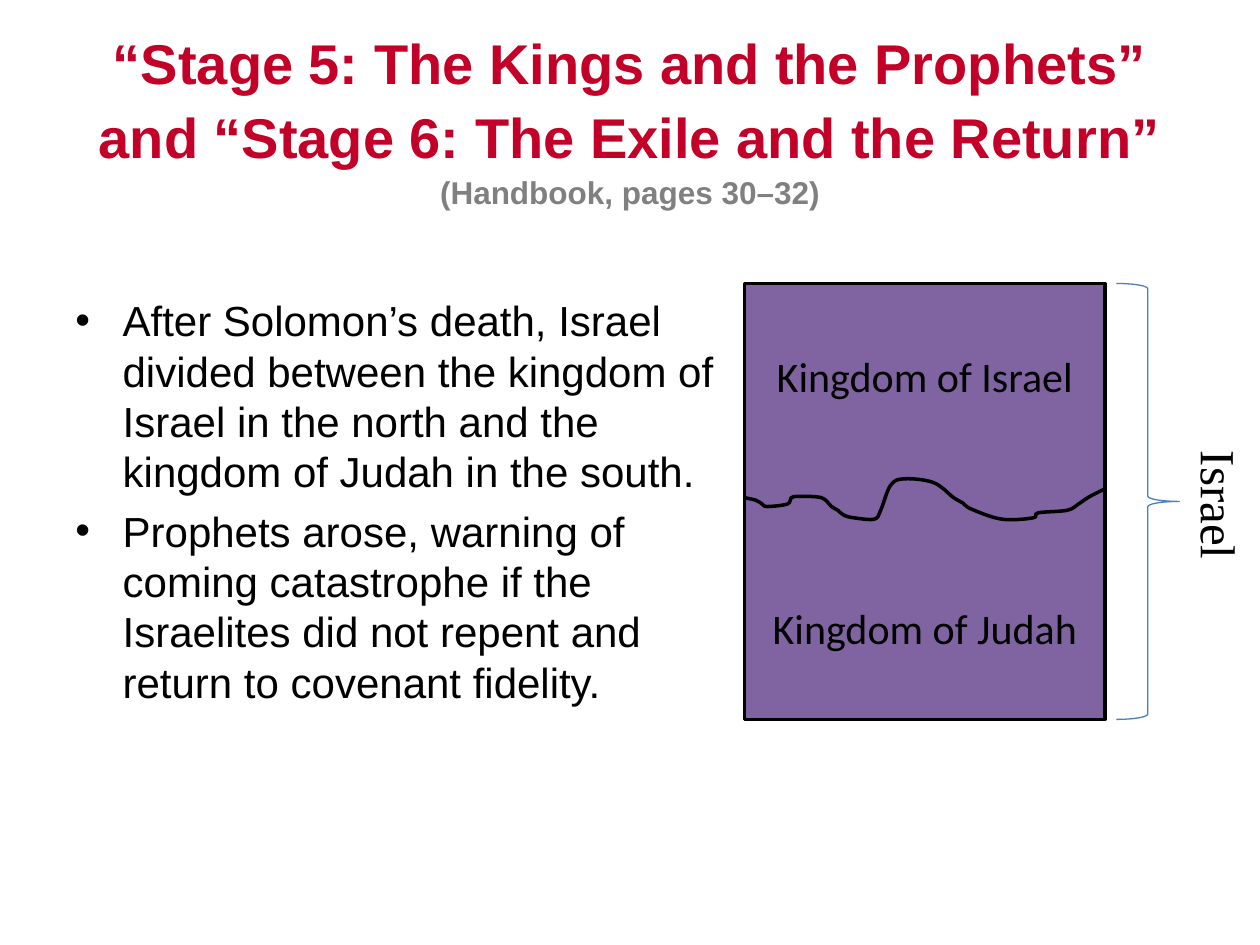
from dataclasses import dataclass

from lxml import etree
from pptx import Presentation
from pptx.dml.color import RGBColor
from pptx.enum.shapes import MSO_SHAPE
from pptx.enum.text import MSO_ANCHOR, MSO_AUTO_SIZE, PP_ALIGN
from pptx.oxml.ns import qn
from pptx.util import Inches, Pt

CENTER, MIDDLE = PP_ALIGN.CENTER, MSO_ANCHOR.MIDDLE
RED, GRAY, BLACK, PURPLE, BLUE = "C30027", "808080", "000000", "8064A2", "4B7EBC"


@dataclass
class Box:
    left: float
    top: float
    width: float
    height: float

    def emu(self) -> list:
        return [Inches(v) for v in (self.left, self.top, self.width, self.height)]


TITLE = Box(0.5, 0.3, 9, 1.25)
BODY = Box(0.5, 2.29, 5.32, 4.95)
MAP = Box(5.91, 2.25, 2.86, 3.46)
BRACE = Box(8.86, MAP.top, 0.5, MAP.height)
LABEL = Box(9.3, 3.48, 0.67, 1.68)

BULLETS = [
    "After Solomon’s death, Israel divided between the kingdom of Israel "
    "in the north and the kingdom of Judah in the south.",
    "Prophets arose, warning of coming catastrophe if the Israelites did not "
    "repent and return to covenant fidelity.",
]

# Points along the border between the two kingdoms
BORDER = [
    (5.91, 3.95), (6, 3.97), (6.05, 4), (6.09, 4.02), (6.25, 4), (6.28, 3.95),
    (6.34, 3.94), (6.52, 3.95), (6.6, 4.02), (6.65, 4.05), (6.7, 4.09), (6.78, 4.11),
    (6.94, 4.12), (6.99, 4.05), (7.07, 3.85), (7.18, 3.8), (7.41, 3.83),
    (7.57, 3.95), (7.64, 3.99), (7.71, 4.04), (7.95, 4.12), (8.2, 4.11),
    (8.24, 4.07), (8.47, 4.05), (8.56, 4), (8.65, 3.94), (8.77, 3.88),
]


def rgb(color: str) -> RGBColor:
    return RGBColor.from_string(color)


def style(r, font: str, size: float, color: str, bold: bool = False) -> None:
    r.font.name, r.font.size, r.font.bold = font, Pt(size), bold
    r.font.color.rgb = rgb(color)


def outline(sp, color: str, width: float, fill: str = "") -> None:
    sp.shadow.inherit = False
    sp.line.color.rgb = rgb(color)
    sp.line.width = Pt(width)
    if fill:
        sp.fill.solid()
        sp.fill.fore_color.rgb = rgb(fill)
    else:
        sp.fill.background()


def add_bullet(p) -> None:
    pPr = p._p.get_or_add_pPr()
    pPr.set("marL", str(Pt(27)))
    pPr.set("indent", str(-Pt(27)))
    etree.SubElement(pPr, qn("a:buFont")).set("typeface", "Arial")
    etree.SubElement(pPr, qn("a:buChar")).set("char", "•")


def add_curve(s, points: list):
    """Smooth open curve: two control points and an end for each step."""
    ends = [points[0], *points, points[-1]]
    nodes = []
    for a, b, c, d in zip(ends, ends[1:], ends[2:], ends[3:]):
        nodes.append([q + (r - p) / 6 for p, q, r in zip(a, b, c)])
        nodes.append([q - (r - p) / 6 for p, q, r in zip(b, c, d)])
        nodes.append(c)
    builder = s.shapes.build_freeform(*map(Inches, points[0]))
    builder.add_line_segments([(Inches(x), Inches(y)) for x, y in nodes], close=False)
    sp = builder.convert_to_shape()

    # Join each three straight segments into one Bezier segment
    lines = list(sp._element.iter(qn("a:lnTo")))
    for first, second, third in zip(lines[::3], lines[1::3], lines[2::3]):
        first.tag = qn("a:cubicBezTo")
        for line in (second, third):
            first.append(line[0])
            line.getparent().remove(line)
    return sp


def add_title(s) -> None:
    sp = s.shapes.title
    sp.left, sp.top, sp.width, sp.height = TITLE.emu()
    tf = sp.text_frame
    tf.word_wrap, tf.vertical_anchor = True, MIDDLE
    tf.auto_size = MSO_AUTO_SIZE.NONE
    p = tf.paragraphs[0]
    p.text = ("“Stage 5: The Kings and the Prophets” and "
              "“Stage 6: The Exile and the Return”\v(Handbook, pages 30–32)")
    p.alignment, p.line_spacing = CENTER, 1.1
    heading, reference = p.runs
    style(heading, "Arial", 32, RED, True)
    style(reference, "Arial", 18, GRAY, True)


def add_body(s) -> None:
    tf = s.shapes.add_textbox(*BODY.emu()).text_frame
    tf.word_wrap = True
    tf.text = "\n".join(BULLETS)
    for i, p in enumerate(tf.paragraphs):
        if i:
            p.space_before = Pt(5)
        add_bullet(p)
        style(p.runs[0], "Arial", 24, BLACK)


def add_map(s) -> None:
    # Land with the two kingdom names
    sp = s.shapes.add_shape(MSO_SHAPE.RECTANGLE, *MAP.emu())
    outline(sp, BLACK, 2, PURPLE)
    tf = sp.text_frame
    tf.word_wrap, tf.vertical_anchor = True, MIDDLE
    tf.text = "Kingdom of Israel\nKingdom of Judah"
    for p in tf.paragraphs:
        p.alignment = CENTER
        style(p.runs[0], "Calibri", 24, BLACK)
    tf.paragraphs[1].space_before = Pt(115)

    # Border line
    outline(add_curve(s, BORDER), BLACK, 2)


def add_brace(s) -> None:
    outline(s.shapes.add_shape(MSO_SHAPE.RIGHT_BRACE, *BRACE.emu()), BLUE, 0.75)

    # Label turned to read downwards
    tf = s.shapes.add_textbox(*LABEL.emu()).text_frame
    tf.word_wrap = True
    tf.auto_size = MSO_AUTO_SIZE.SHAPE_TO_FIT_TEXT
    tf._txBody.bodyPr.set("vert", "vert")
    tf.text = "Israel"
    style(tf.paragraphs[0].runs[0], "Times New Roman", 28, BLACK)


def main() -> None:
    prs = Presentation()
    prs.slide_width, prs.slide_height = Inches(10), Inches(7.5)
    s = prs.slides.add_slide(prs.slide_layouts[5])
    add_title(s)
    add_body(s)
    add_map(s)
    add_brace(s)
    prs.save("out.pptx")


if __name__ == "__main__":
    main()
